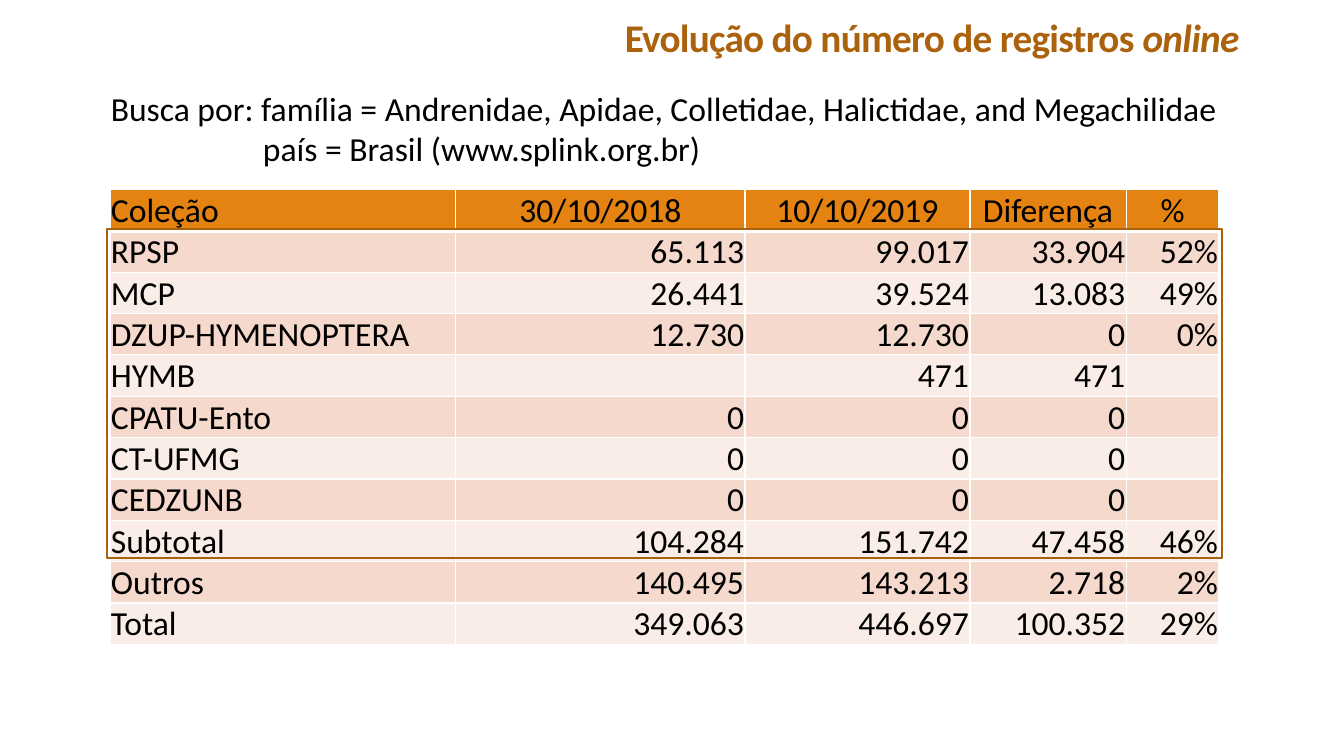
from pptx import Presentation
from pptx import util as u
from pptx.dml import color
from pptx.enum import shapes, text
from pptx.oxml import parse_xml
from pptx.oxml.ns import nsdecls

AL = text.PP_ALIGN
AN = text.MSO_ANCHOR
BROWN = "AB620D"
HEAD = "E48312"
BANDS = ["F5D9CC", "FAEDE7"]
COLS = [3.43, 2.87, 2.23, 1.55, 0.92]
DATA = [
    ["Coleção", "30/10/2018", "10/10/2019", "Diferença", "%"],
    ["RPSP", "65.113", "99.017", "33.904", "52%"],
    ["MCP", "26.441", "39.524", "13.083", "49%"],
    ["DZUP-HYMENOPTERA", "12.730", "12.730", "0", "0%"],
    ["HYMB", "", "471", "471", ""],
    ["CPATU-Ento", "0", "0", "0", ""],
    ["CT-UFMG", "0", "0", "0", ""],
    ["CEDZUNB", "0", "0", "0", ""],
    ["Subtotal", "104.284", "151.742", "47.458", "46%"],
    ["Outros", "140.495", "143.213", "2.718", "2%"],
    ["Total", "349.063", "446.697", "100.352", "29%"],
]


def rgb(code):
    return color.RGBColor.from_string(code)


def put(item, form):
    for name, value in form.items():
        setattr(item, name, value)


def add_run(para, words, size, tint="000000", **form):
    run = para.add_run()
    run.text = words
    put(run.font, {"name": "Calibri", "size": u.Pt(size), **form})
    run.font.color.rgb = rgb(tint)
    return run


def add_box(slide, spot, **form):
    box = slide.shapes.add_textbox(*map(u.Inches, spot))
    put(box.text_frame, form)
    return box.text_frame


def add_title(slide):
    frame = add_box(slide, (1.39, 0, 11, 0.65), word_wrap=True,
                    vertical_anchor=AN.BOTTOM)
    para = frame.paragraphs[0]
    put(para, {"alignment": AL.RIGHT, "line_spacing": 0.85})
    for words, slant in [("Evolução do número de registros ", False),
                         ("online", True)]:
        run = add_run(para, words, 28, BROWN, bold=True, italic=slant)
        run.font._element.set("spc", "-50")


def add_query(slide):
    frame = add_box(slide, (1, 0.82, 11.19, 0.91), word_wrap=False,
                    auto_size=text.MSO_AUTO_SIZE.SHAPE_TO_FIT_TEXT)
    add_run(frame.paragraphs[0], "Busca por: família = Andrenidae, Apidae, "
            "Colletidae, Halictidae, and Megachilidae", 24)
    para = frame.add_paragraph()
    para._p.get_or_add_pPr().set("marL", str(u.Inches(1.51)))
    add_run(para, "país = Brasil (www.splink.org.br)", 24)


def add_edge(cell, side, width):
    cell._tc.get_or_add_tcPr().append(parse_xml(
        f'<a:ln{side} {nsdecls("a")} w="{u.Pt(width)}"><a:solidFill>'
        f'<a:srgbClr val="FFFFFF"/></a:solidFill></a:ln{side}>'))


def fill_cell(cell, words, row, col):
    for side in "LRTB":
        thick = (row, side) in [(0, "B"), (1, "T")]
        add_edge(cell, side, 3 if thick else 1)
    cell.fill.solid()
    cell.fill.fore_color.rgb = rgb(BANDS[(row - 1) % 2] if row else HEAD)
    middle = row == 0 and col not in (1, 2)
    put(cell, {"margin_left": u.Inches(0.01), "margin_right": u.Inches(0.01),
               "margin_top": u.Inches(0.01), "margin_bottom": 0,
               "vertical_anchor": AN.MIDDLE if middle else AN.BOTTOM})
    para = cell.text_frame.paragraphs[0]
    if col:
        para.alignment = AL.RIGHT if row else AL.CENTER
    if words:
        add_run(para, words, 24)


def add_grid(slide):
    spot = map(u.Inches, (1.09, 1.88, 11, 4.49))
    grid = slide.shapes.add_table(len(DATA), len(COLS), *spot).table
    put(grid, {"first_row": False, "horz_banding": False})
    for col, width in zip(grid.columns, COLS):
        col.width = u.Inches(width)
    for row, line in enumerate(DATA):
        for col, words in enumerate(line):
            fill_cell(grid.cell(row, col), words, row, col)


def add_frame(slide):
    frame = slide.shapes.add_shape(shapes.MSO_SHAPE.RECTANGLE,
                                   *map(u.Inches, (1.06, 2.27, 11.06, 3.27)))
    frame.shadow.inherit = False
    frame.fill.background()
    frame.line.color.rgb = rgb("A9610D")
    frame.line.width = u.Pt(1.25)


def main():
    deck = Presentation()
    put(deck, {"slide_width": u.Inches(13.33), "slide_height": u.Inches(7.5)})
    slide = deck.slides.add_slide(deck.slide_layouts[6])
    add_title(slide)
    add_query(slide)
    add_grid(slide)
    add_frame(slide)
    deck.save("out.pptx")


if __name__ == "__main__":
    main()
